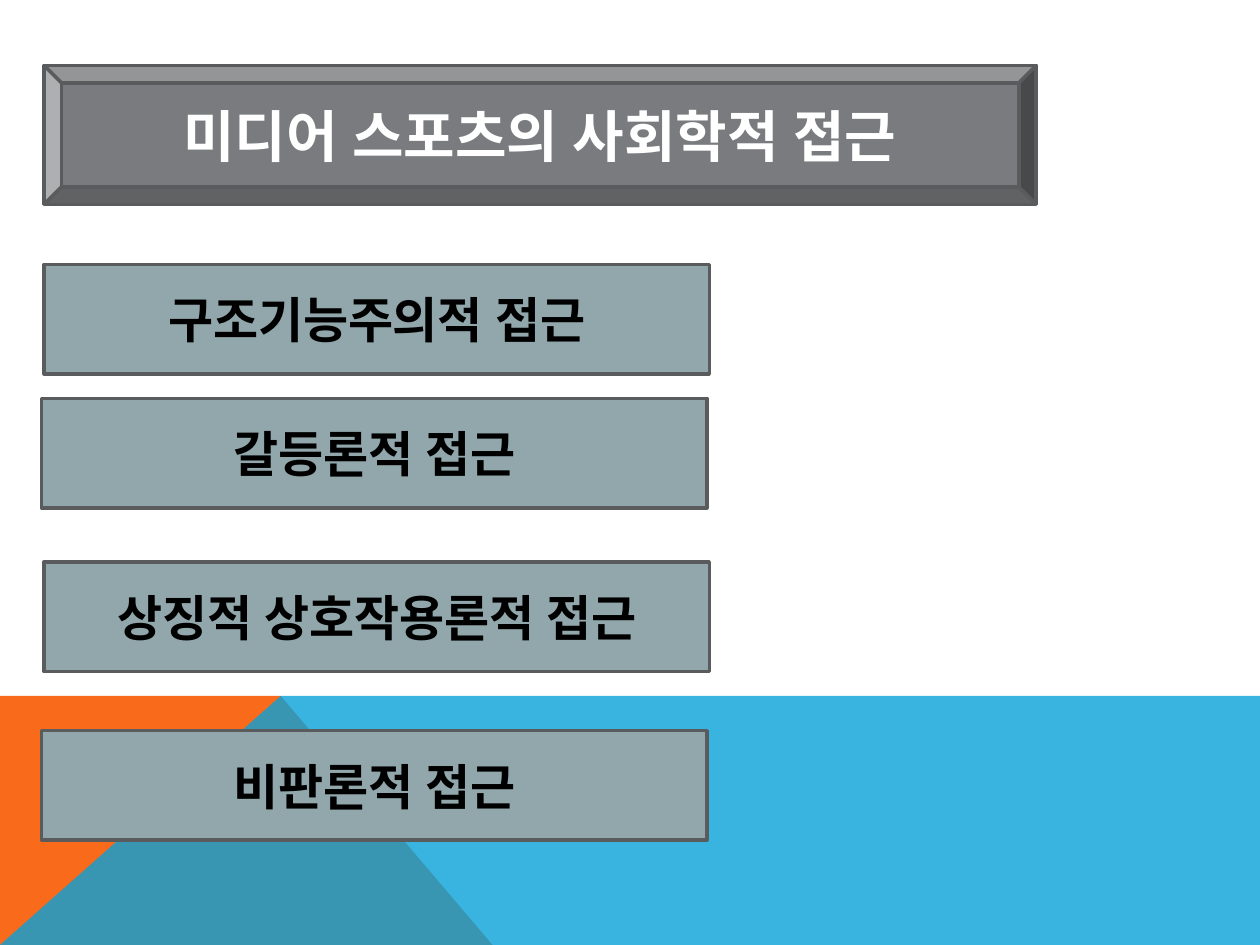
from lxml.etree import SubElement
from pptx import Presentation
from pptx.dml.color import RGBColor
from pptx.enum.shapes import MSO_SHAPE
from pptx.enum.text import MSO_ANCHOR, PP_ALIGN
from pptx.oxml.ns import qn
from pptx.util import Cm, Pt

FONT = "Karla"
WIDTH, HEIGHT = 25.4, 19.05


def color(hex_code):
    return RGBColor.from_string(hex_code)


def add_text(sp, text, size=28, font_color="000000", bold=True):
    tf = sp.text_frame
    tf.word_wrap = True
    tf.vertical_anchor = MSO_ANCHOR.MIDDLE
    p = tf.paragraphs[0]
    p.alignment = PP_ALIGN.CENTER
    r = p.add_run()
    r.text = text
    r.font.name = FONT
    r.font.size = Pt(size)
    r.font.bold = bold
    r.font.color.rgb = color(font_color)
    # Korean glyphs take the East Asian typeface
    SubElement(r.font._element, qn("a:ea"), typeface=FONT)


def add_box(s, left, top, width, height, text, shape=MSO_SHAPE.RECTANGLE,
            fill="91A7AB", **text_format):
    sp = s.shapes.add_shape(shape, Cm(left), Cm(top), Cm(width), Cm(height))
    sp.shadow.inherit = False
    sp.fill.solid()
    sp.fill.fore_color.rgb = color(fill)
    sp.line.color.rgb = color("5A5B5D")
    sp.line.width = Pt(2)
    add_text(sp, text, **text_format)


def add_polygon(s, points, fill, opacity=100):
    start, *rest = [(Cm(x), Cm(y)) for x, y in points]
    builder = s.shapes.build_freeform(*start)
    builder.add_line_segments(rest, close=True)
    sp = builder.convert_to_shape()
    sp.shadow.inherit = False
    sp.fill.solid()
    sp.fill.fore_color.rgb = color(fill)
    sp.line.fill.background()
    if opacity < 100:
        clr = sp.fill._xPr.find(".//" + qn("a:srgbClr"))
        SubElement(clr, qn("a:alpha"), val=str(opacity * 1000))


def add_footer_band(s, left, top, width, height):
    right, bottom = left + width, top + height
    peak = (left + 5.66, top)
    # Orange wedge, then the translucent blue band over it
    add_polygon(s, [(left, bottom), (left, top), peak, (left + 9.93, bottom)],
                "F96A1B")
    add_polygon(s, [(left, bottom), peak, (right, top), (right, bottom)],
                "08A1D9", opacity=80)


def add_approaches(s, left, top, width, height):
    # Each entry: text, offset from the left, offset from the top
    approaches = [
        ("구조기능주의적 접근", 0.05, 0),
        ("갈등론적 접근", 0, 2.7),
        ("상징적 상호작용론적 접근", 0.05, 6),
        ("비판론적 접근", 0, 9.4),
    ]
    for text, dx, dy in approaches:
        add_box(s, left + dx, top + dy, width, height, text)


def main():
    prs = Presentation()
    prs.slide_width, prs.slide_height = Cm(WIDTH), Cm(HEIGHT)
    s = prs.slides.add_slide(prs.slide_layouts[6])

    # Background band
    add_footer_band(s, 0, 14.03, WIDTH, HEIGHT - 14.03)
    # Title
    add_box(s, 0.89, 1.32, 20, 2.8, "미디어 스포츠의 사회학적 접근",
            shape=MSO_SHAPE.BEVEL, fill="797B7E", size=32, font_color="FFFFFF")
    # Four approaches
    add_approaches(s, 0.84, 5.33, 13.41, 2.21)

    prs.save("out.pptx")


if __name__ == "__main__":
    main()
